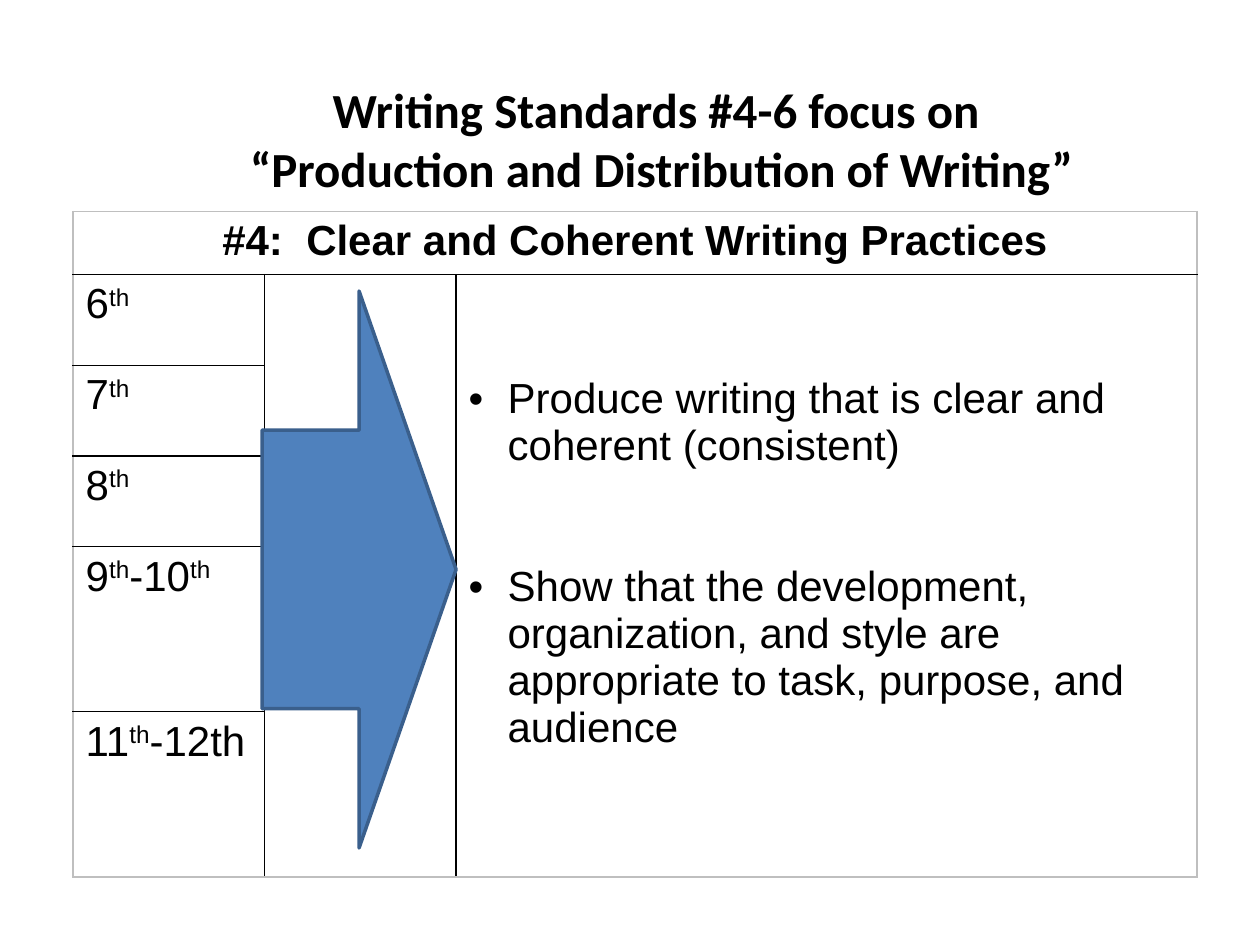
from dataclasses import dataclass

from lxml import etree
from pptx import Presentation
from pptx.dml.color import RGBColor
from pptx.enum.shapes import MSO_SHAPE
from pptx.enum.text import PP_ALIGN
from pptx.oxml import parse_xml
from pptx.oxml.ns import nsdecls, qn
from pptx.slide import Slide
from pptx.util import Inches, Pt

CENTER = PP_ALIGN.CENTER
RIGHT_ARROW = MSO_SHAPE.RIGHT_ARROW
COLORS = {"text": "000000", "grid": "000000", "frame": "BFBFBF",
          "arrow": "4F81BD", "arrow_line": "3A5F8C"}
TITLE = ["Writing Standards #4-6 focus on ", "“Production and Distribution of Writing”"]
HEADING = "#4:  Clear and Coherent Writing Practices"
GRADES = [["6", "th"], ["7", "th"], ["8", "th"], ["9", "th", "-10", "th"], ["11", "th", "-12th"]]
PRACTICES = ["Produce writing that is clear and coherent (consistent)",
             "Show that the development, organization, and style are "
             "appropriate to task, purpose, and audience"]
COLUMN_WIDTHS = [1.52, 1.52, 5.88]
ROW_HEIGHTS = [0.5, 0.72, 0.72, 0.72, 1.31, 1.31]


@dataclass
class StandardsSlide:
    """Draws the elements of a writing standards slide in one style."""
    slide: Slide
    title_font: str = "Calibri"
    body_font: str = "Arial"
    title_size: int = 28
    body_size: int = 24

    def color(self, name):
        return RGBColor.from_string(COLORS[name])

    def format_runs(self, paragraph, font_name, size, bold=False):
        for run in paragraph.runs:
            run.font.name = font_name
            run.font.size = Pt(size)
            run.font.bold = bold
            run.font.color.rgb = self.color("text")

    def title(self, lines, left, top, width, height):
        box = self.slide.shapes.add_textbox(Inches(left), Inches(top), Inches(width), Inches(height))
        box.text_frame.word_wrap = True
        box.text_frame.text = "\n".join(lines)
        for paragraph in box.text_frame.paragraphs:
            paragraph.alignment = CENTER
            self.format_runs(paragraph, self.title_font, self.title_size, bold=True)

    def table(self, left, top):
        table = self.slide.shapes.add_table(
            len(ROW_HEIGHTS), len(COLUMN_WIDTHS), Inches(left), Inches(top),
            Inches(sum(COLUMN_WIDTHS)), Inches(sum(ROW_HEIGHTS))).table
        table.first_row = table.horz_banding = False
        for column, width in zip(table.columns, COLUMN_WIDTHS):
            column.width = Inches(width)
        for row, height in zip(table.rows, ROW_HEIGHTS):
            row.height = Inches(height)
        last_row, last_column = len(ROW_HEIGHTS) - 1, len(COLUMN_WIDTHS) - 1
        table.cell(0, 0).merge(table.cell(0, last_column))
        for column in (1, 2):
            table.cell(1, column).merge(table.cell(last_row, column))
        for row in range(last_row + 1):
            for column in range(last_column + 1):
                cell = table.cell(row, column)
                cell.fill.background()
                self.borders(cell, {
                    "lnL": column == 0,
                    "lnR": column + cell.span_width > last_column,
                    "lnT": row == 0,
                    "lnB": row + cell.span_height > last_row})
        return table

    def borders(self, cell, edges):
        properties = cell._tc.get_or_add_tcPr()
        for position, (tag, is_outer) in enumerate(edges.items()):
            line = parse_xml(f'<a:{tag} {nsdecls("a")} w="12700"/>')
            fill = etree.SubElement(line, qn("a:solidFill"))
            etree.SubElement(fill, qn("a:srgbClr"), val=COLORS["frame" if is_outer else "grid"])
            properties.insert(position, line)

    def heading(self, cell, text):
        cell.text_frame.text = text
        paragraph = cell.text_frame.paragraphs[0]
        paragraph.alignment = CENTER
        self.format_runs(paragraph, self.body_font, self.body_size, bold=True)

    def grade(self, cell, parts):
        paragraph = cell.text_frame.paragraphs[0]
        for part in parts:
            run = paragraph.add_run()
            run.text = part
            if part == "th":
                run._r.get_or_add_rPr().set("baseline", "30000")
        self.format_runs(paragraph, self.body_font, self.body_size)

    def bullets(self, cell, items, top_margin, gap):
        cell.margin_top = Inches(top_margin)
        cell.text_frame.text = "\n".join(items)
        for index, paragraph in enumerate(cell.text_frame.paragraphs):
            properties = paragraph._p.get_or_add_pPr()
            properties.set("marL", str(Inches(0.31)))
            properties.set("indent", str(-Inches(0.31)))
            etree.SubElement(properties, qn("a:buFont"), typeface=self.body_font)
            etree.SubElement(properties, qn("a:buChar"), char="•")
            if index:
                paragraph.space_before = Pt(gap)
            self.format_runs(paragraph, self.body_font, self.body_size)

    def arrow(self, left, top, width, height):
        shape = self.slide.shapes.add_shape(
            RIGHT_ARROW, Inches(left), Inches(top), Inches(width), Inches(height))
        shape.shadow.inherit = False
        shape.fill.solid()
        shape.fill.fore_color.rgb = self.color("arrow")
        shape.line.color.rgb = self.color("arrow_line")
        shape.line.width = Pt(2)


def main():
    presentation = Presentation()
    presentation.slide_width = Inches(10)
    presentation.slide_height = Inches(7.5)
    standards = StandardsSlide(presentation.slides.add_slide(presentation.slide_layouts[6]))
    table = standards.table(0.58, 1.68)
    standards.heading(table.cell(0, 0), HEADING)
    for row, parts in enumerate(GRADES, start=1):
        standards.grade(table.cell(row, 0), parts)
    standards.bullets(table.cell(1, 2), PRACTICES, top_margin=0.8, gap=54)
    standards.title(TITLE, 1.75, 0.58, 7, 1.04)
    standards.arrow(2.08, 2.31, 1.54, 4.42)
    presentation.save("out.pptx")


if __name__ == "__main__":
    main()
